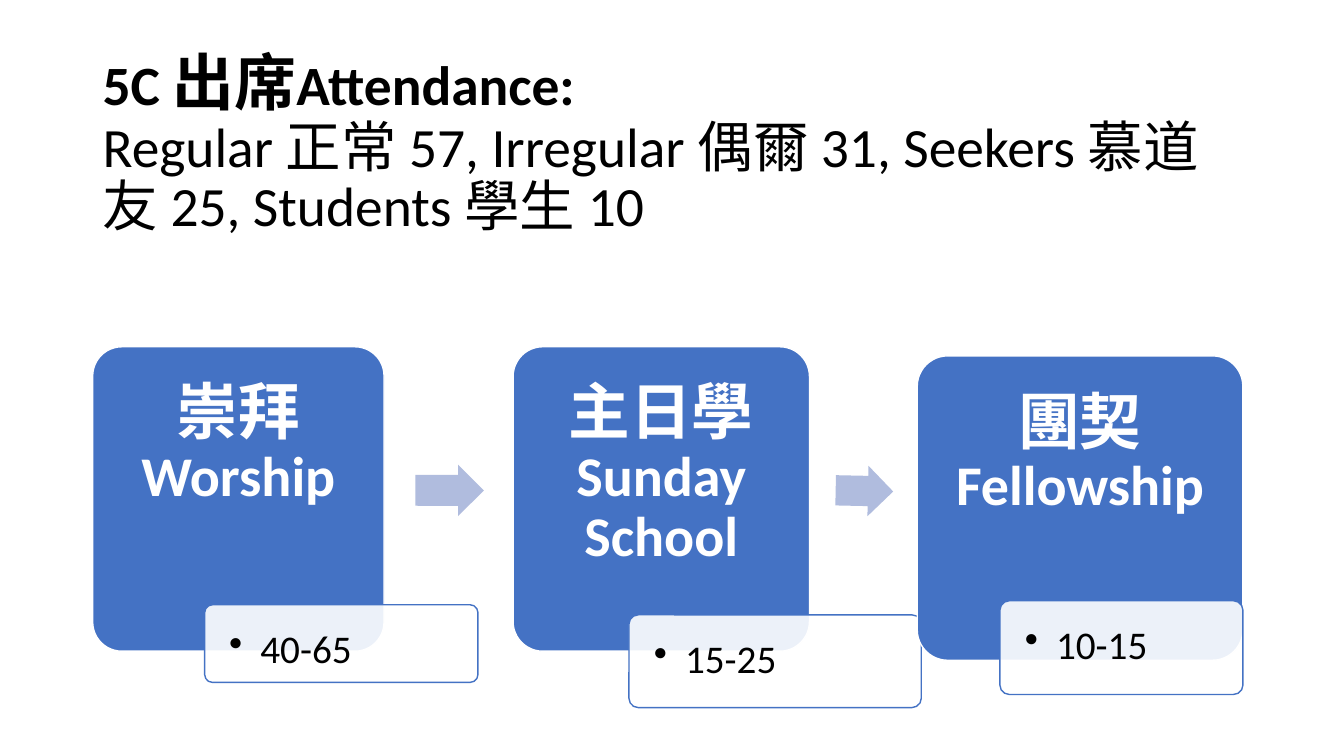
from lxml import etree
from pptx import Presentation
from pptx.dml.color import RGBColor
from pptx.enum.shapes import MSO_SHAPE
from pptx.enum.text import MSO_ANCHOR, PP_ALIGN
from pptx.oxml.ns import qn
from pptx.util import Inches, Pt

ROUND, ARROW = MSO_SHAPE.ROUNDED_RECTANGLE, MSO_SHAPE.RIGHT_ARROW
TOP, MIDDLE = MSO_ANCHOR.TOP, MSO_ANCHOR.MIDDLE
LEFT, CENTER = PP_ALIGN.LEFT, PP_ALIGN.CENTER

BLACK = RGBColor(0x00, 0x00, 0x00)
WHITE = RGBColor(0xFF, 0xFF, 0xFF)
BLUE = RGBColor(0x44, 0x72, 0xC4)
PALE = RGBColor(0xB0, 0xBC, 0xDE)

# Boxes are left, top, width, height in percent of the slide.
TITLE = (6.9, 5.33, 86.25, 27.87)
STEPS = [
    ("崇拜", "Worship", (6.9, 45.87, 21.68, 40.27),
     "40-65", (15.23, 80, 20.33, 10.27)),
    ("主日學", "Sunday School", (38.18, 45.87, 22.05, 40.27),
     "15-25", (46.8, 81.33, 21.75, 12.27)),
    ("團契", " Fellowship", (68.25, 47.07, 24.23, 40.27),
     "10-15", (74.4, 79.47, 18.08, 12.4)),
]
ARROWS = [((30.9, 61.47, 5.1, 6.8), 0.1), ((62.18, 61.6, 4.28, 6.67), 1.2)]


class Deck:
    font = "Calibri"
    spacing = 0.9

    def __init__(self):
        self.prs = Presentation()
        self.prs.slide_width, self.prs.slide_height = Inches(13.33), Inches(7.5)
        self.slide = self.prs.slides.add_slide(self.prs.slide_layouts[6])

    def place(self, box):
        """Turn percent shares into slide lengths."""
        sides = (self.prs.slide_width, self.prs.slide_height) * 2
        return [round(side * share / 100) for side, share in zip(sides, box)]

    def shape(self, kind, box, fill, line=None):
        shape = self.slide.shapes.add_shape(kind, *self.place(box))
        shape.shadow.inherit = False
        shape.fill.solid()
        shape.fill.fore_color.rgb = fill
        if line is None:
            shape.line.fill.background()
        else:
            shape.line.color.rgb = line
            shape.line.width = Pt(1)
        return shape

    def frame(self, shape, inset, anchor, align, color, bold=False):
        """Set up the text frame and return its first paragraph."""
        frame = shape.text_frame
        frame.word_wrap = True
        frame.vertical_anchor = anchor
        frame.margin_left = frame.margin_right = Inches(inset)
        frame.margin_top = frame.margin_bottom = Inches(inset)
        para = frame.paragraphs[0]
        para.alignment, para.line_spacing = align, self.spacing
        para.font.name, para.font.bold = self.font, bold
        para.font.color.rgb = color
        return para

    def run(self, para, text, size, bold=None):
        run = para.add_run()
        run.text = text
        run.font.size, run.font.bold = Pt(size), bold

    def title(self, box):
        text = self.slide.shapes.add_textbox(*self.place(box))
        para = self.frame(text, 0.1, MIDDLE, LEFT, BLACK)
        self.run(para, "5C ", 39.6, True)
        self.run(para, "出席", 44.1, True)
        self.run(para, "Attendance:", 39.6, True)
        para.add_line_break()
        self.run(para, "Regular 正常 57, Irregular 偶爾 31, "
                       "Seekers 慕道友 25, Students 學生 10", 39.6)

    def card(self, box, name, label):
        card = self.shape(ROUND, box, BLUE, WHITE)
        card.adjustments[0] = 0.1
        para = self.frame(card, 0.26, TOP, CENTER, WHITE, True)
        self.run(para, name, 44)
        self.run(para, label, 40)

    def note(self, box, count):
        note = self.shape(ROUND, box, WHITE, BLUE)
        note.adjustments[0] = 0.1
        tint = note.fill._xPr.find(qn("a:solidFill"))[0]
        etree.SubElement(tint, qn("a:alpha"), val="90000")
        para = self.frame(note, 0.22, TOP, LEFT, BLACK)
        para.font.size = Pt(28)
        para.text = count
        props = para._p.get_or_add_pPr()
        props.set("marL", str(Inches(0.31)))
        props.set("indent", str(-Inches(0.31)))
        bullet = etree.Element(qn("a:buChar"), char="•")
        props.find(qn("a:defRPr")).addprevious(bullet)

    def arrow(self, box, turn):
        arrow = self.shape(ARROW, box, PALE)
        arrow.adjustments[0] = 0.6
        arrow.rotation = turn


def main():
    deck = Deck()
    deck.title(TITLE)
    for name, label, card, count, note in STEPS:
        deck.card(card, name, label)
        deck.note(note, count)
    for box, turn in ARROWS:
        deck.arrow(box, turn)
    deck.prs.save("out.pptx")


if __name__ == "__main__":
    main()
